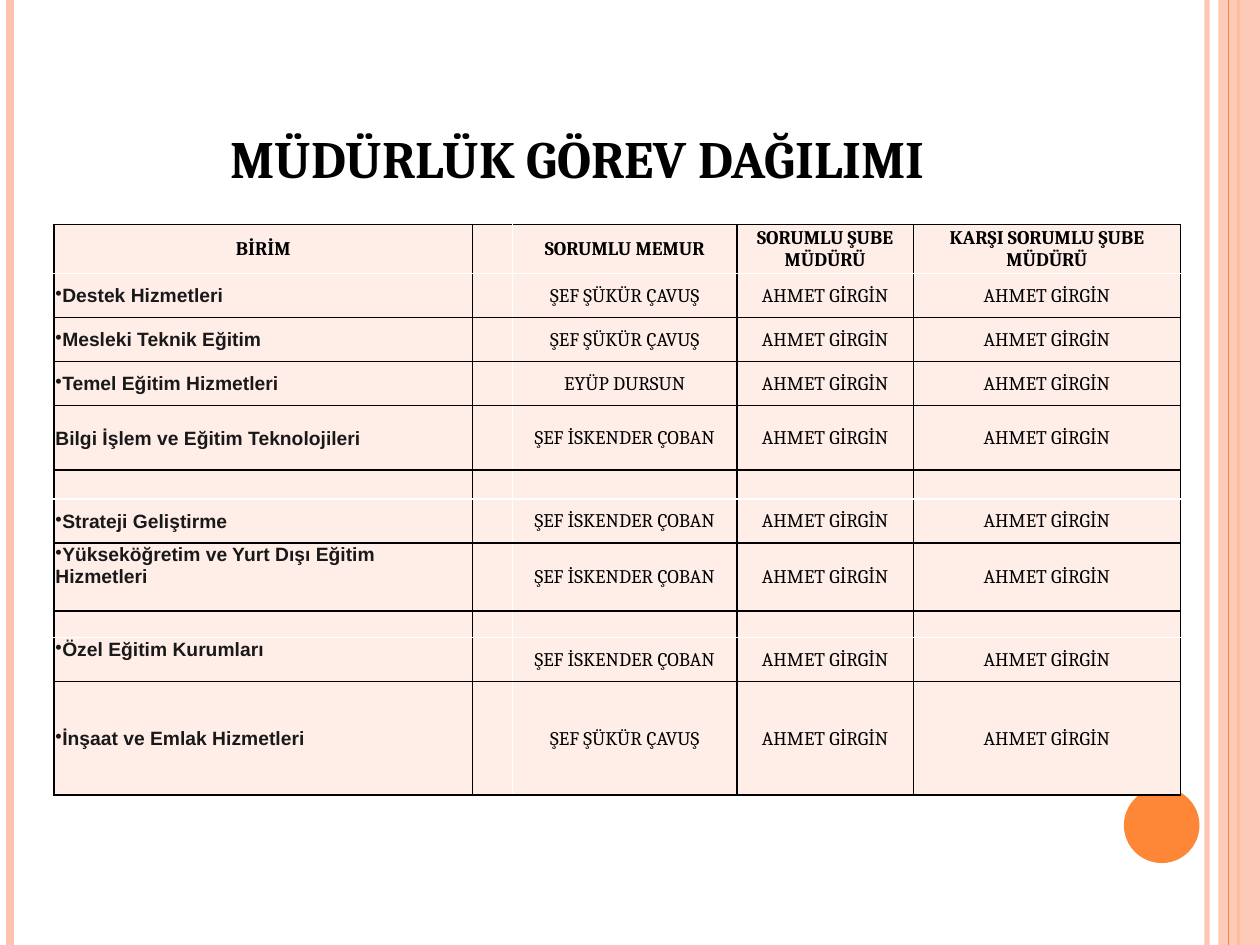
"""Builds a slide with the table of unit responsibilities."""
from dataclasses import dataclass

from lxml import etree
from pptx import Presentation
from pptx import util as u
from pptx.dml import color
from pptx.enum import shapes, text
from pptx.oxml import ns


@dataclass(frozen=True)
class Theme:
    """Colours, fonts and type sizes of the slide."""
    ink: str = "000000"
    unit_ink: str = "191919"
    white: str = "FFFFFF"
    cell: str = "FFEDE8"
    peach: str = "FEC3AE"
    orange: str = "FE8637"
    serif: str = "Cambria"
    sans: str = "Arial"
    title_size: int = 30
    cell_size: int = 11


THEME = Theme()
TITLE = "MÜDÜRLÜK GÖREV DAĞILIMI"
HEADINGS = ["BİRİM", "", "SORUMLU MEMUR", "SORUMLU ŞUBE MÜDÜRÜ",
            "KARŞI SORUMLU ŞUBE MÜDÜRÜ"]
MANAGER = "AHMET GİRGİN"
CAVUS, COBAN, DURSUN = "ŞEF ŞÜKÜR ÇAVUŞ", "ŞEF İSKENDER ÇOBAN", "EYÜP DURSUN"
SPACER = None
DUTIES = [
    ("Destek Hizmetleri", CAVUS),
    ("Mesleki Teknik Eğitim", CAVUS),
    ("Temel Eğitim Hizmetleri", DURSUN),
    ("Bilgi İşlem ve Eğitim Teknolojileri", COBAN),
    SPACER,
    ("Strateji Geliştirme", COBAN),
    ("Yükseköğretim ve Yurt Dışı Eğitim Hizmetleri", COBAN),
    SPACER,
    ("Özel Eğitim Kurumları", COBAN),
    ("İnşaat ve Emlak Hizmetleri", CAVUS),
]
PLAIN_UNIT_ROW = 4
TOP_UNIT_ROWS = {7, 9}
COLUMN_WIDTHS = [3.32, 0.32, 1.78, 1.4, 2.12]
ROW_HEIGHTS = [0.39, 0.35, 0.35, 0.35, 0.51, 0.23, 0.35, 0.54, 0.21, 0.35, 0.9]
WHITE_ROW_EDGES = {1, 6, 9}
WHITE_COLUMN_EDGES = {2}


def rgb(value):
    """Return a colour object for a hex value."""
    return color.RGBColor.from_string(value)


def set_alpha(element, percent):
    """Make the solid colour inside an element partly transparent."""
    swatch = element.find(".//" + ns.qn("a:srgbClr"))
    etree.SubElement(swatch, ns.qn("a:alpha"), val=str(percent * 1000))


def add_stripe(slide, x, hue, weight, alpha=100):
    """Draw a vertical line over the full slide height."""
    stripe = slide.shapes.add_connector(
        shapes.MSO_CONNECTOR.STRAIGHT, u.Inches(x), 0, u.Inches(x), u.Inches(7.5))
    stripe.line.color.rgb = rgb(hue)
    stripe.line.width = u.Pt(weight)
    properties = stripe.line._get_or_add_ln().getparent()
    if alpha < 100:
        set_alpha(properties, alpha)
    etree.SubElement(properties, ns.qn("a:effectLst"))


def add_ornament(slide, preset, box, hue, alpha=100):
    """Draw a borderless filled shape."""
    ornament = slide.shapes.add_shape(preset, *map(u.Inches, box))
    ornament.shadow.inherit = False
    ornament.fill.solid()
    ornament.fill.fore_color.rgb = rgb(hue)
    ornament.line.fill.background()
    if alpha < 100:
        set_alpha(ornament.fill._xPr, alpha)


def add_decoration(slide):
    """Draw the side stripes, the band and the circle."""
    add_stripe(slide, 9.58, THEME.peach, 3, 93)
    add_stripe(slide, 0.08, THEME.peach, 4.5)
    add_stripe(slide, 9.83, THEME.orange, 1.5)
    add_ornament(slide, shapes.MSO_SHAPE.RECTANGLE, (9.67, 0, 0.33, 7.5), THEME.peach, 87)
    add_stripe(slide, 9.75, THEME.orange, 0.75)
    add_ornament(slide, shapes.MSO_SHAPE.OVAL, (8.92, 6.25, 0.6, 0.6), THEME.orange)


def format_font(font, name, size, hue, bold):
    """Apply typeface, size, colour and weight."""
    font.name = name
    font.size = u.Pt(size)
    font.color.rgb = rgb(hue)
    font.bold = bold


def set_title(slide):
    """Place and format the title placeholder."""
    title = slide.shapes.title
    title.left, title.top, title.width, title.height = map(u.Inches, (0.5, 0.3, 8.17, 1.25))
    frame = title.text_frame
    frame.text = TITLE
    frame.auto_size = text.MSO_AUTO_SIZE.NONE
    frame.vertical_anchor = text.MSO_ANCHOR.BOTTOM
    heading = frame.paragraphs[0]
    heading.alignment = text.PP_ALIGN.CENTER
    format_font(heading.runs[0].font, THEME.serif, THEME.title_size, THEME.ink, True)


def set_borders(cell, row, column):
    """Give a cell black borders, with white ones on the soft grid edges."""
    soft_edges = [
        ("a:lnL", column in WHITE_COLUMN_EDGES),
        ("a:lnR", column + 1 in WHITE_COLUMN_EDGES),
        ("a:lnT", row in WHITE_ROW_EDGES),
        ("a:lnB", row + 1 in WHITE_ROW_EDGES),
    ]
    properties = cell._tc.get_or_add_tcPr()
    for position, (tag, soft) in enumerate(soft_edges):
        border = etree.Element(ns.qn(tag), w=str(u.Pt(1)))
        fill = etree.SubElement(border, ns.qn("a:solidFill"))
        etree.SubElement(fill, ns.qn("a:srgbClr"), val=THEME.white if soft else THEME.ink)
        properties.insert(position, border)


def add_bullet(paragraph):
    """Put a bullet directly before the paragraph text."""
    properties = paragraph._p.get_or_add_pPr()
    properties.set("marL", "0")
    properties.set("indent", "0")
    etree.SubElement(properties, ns.qn("a:buChar"), char="•")


def fill_cell(cell, wording, row, column):
    """Write and format one table cell."""
    is_unit = row > 0 and column == 0
    cell.text_frame.text = wording
    cell.margin_left = cell.margin_top = cell.margin_right = u.Inches(0.01)
    cell.margin_bottom = 0
    at_top = is_unit and row in TOP_UNIT_ROWS
    cell.vertical_anchor = text.MSO_ANCHOR.TOP if at_top else text.MSO_ANCHOR.MIDDLE
    cell.fill.solid()
    cell.fill.fore_color.rgb = rgb(THEME.cell)
    set_borders(cell, row, column)
    paragraph = cell.text_frame.paragraphs[0]
    paragraph.alignment = text.PP_ALIGN.LEFT if is_unit else text.PP_ALIGN.CENTER
    if not wording:
        etree.SubElement(paragraph._p, ns.qn("a:endParaRPr"), sz=str(THEME.cell_size * 100))
        return
    if is_unit and row != PLAIN_UNIT_ROW:
        add_bullet(paragraph)
    format_font(paragraph.runs[0].font, THEME.sans if is_unit else THEME.serif,
                THEME.cell_size, THEME.unit_ink if is_unit else THEME.ink,
                row == 0 or is_unit)


def duty_row(duty):
    """Expand a duty into the wording of its five cells."""
    if duty is SPACER:
        return [""] * len(HEADINGS)
    unit, officer = duty
    return [unit, "", officer, MANAGER, MANAGER]


def add_duty_table(slide):
    """Add the table of units and the people responsible for them."""
    rows = [HEADINGS] + [duty_row(duty) for duty in DUTIES]
    table = slide.shapes.add_table(
        len(rows), len(HEADINGS), u.Inches(0.43), u.Inches(1.78),
        u.Inches(sum(COLUMN_WIDTHS)), u.Inches(sum(ROW_HEIGHTS))).table
    table.first_row = table.horz_banding = False
    for column, width in zip(table.columns, COLUMN_WIDTHS):
        column.width = u.Inches(width)
    for row, height in zip(table.rows, ROW_HEIGHTS):
        row.height = u.Inches(height)
    for r, wordings in enumerate(rows):
        for c, wording in enumerate(wordings):
            fill_cell(table.cell(r, c), wording, r, c)


def main():
    """Build the presentation and save it."""
    deck = Presentation()
    deck.slide_width, deck.slide_height = u.Inches(10), u.Inches(7.5)
    slide = deck.slides.add_slide(deck.slide_layouts[5])
    add_decoration(slide)
    set_title(slide)
    add_duty_table(slide)
    deck.save("out.pptx")


if __name__ == "__main__":
    main()
